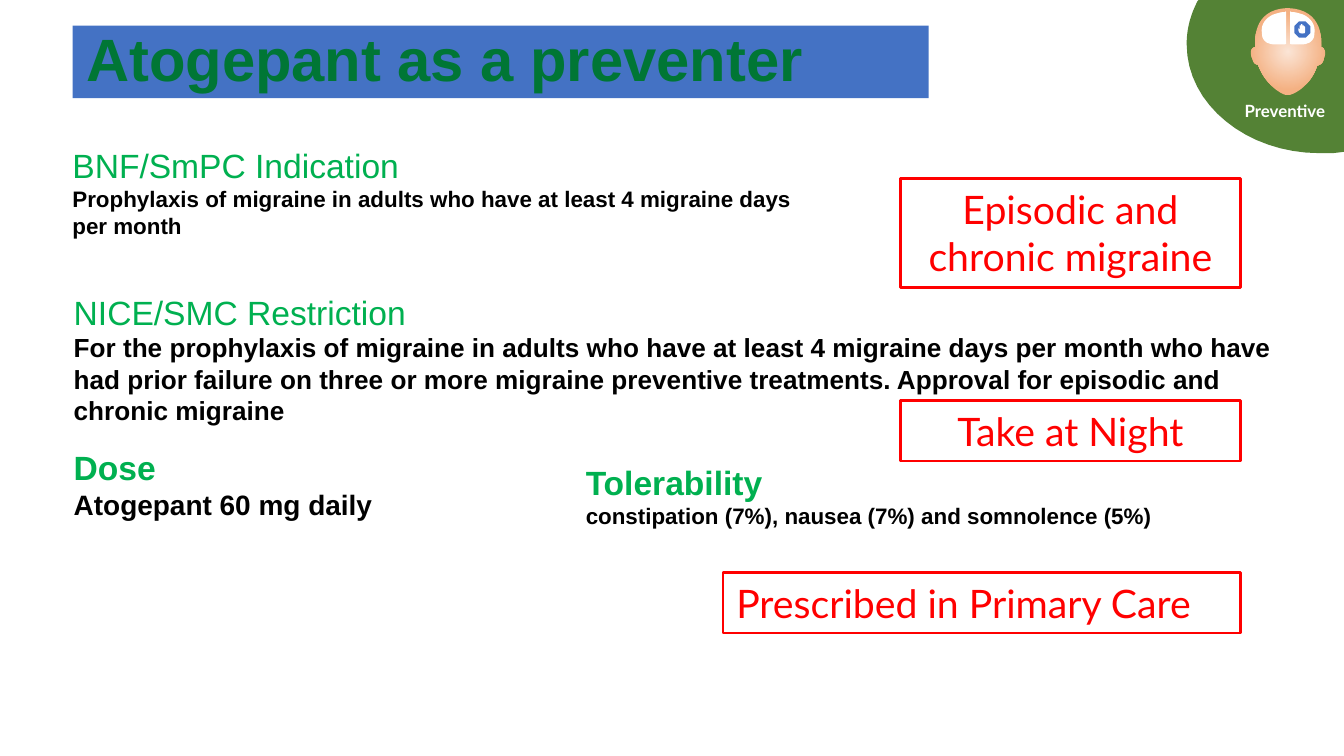
from typing import NamedTuple

from lxml import etree
from pptx import Presentation
from pptx.dml.color import RGBColor
from pptx.enum.shapes import MSO_SHAPE
from pptx.enum.text import MSO_ANCHOR, PP_ALIGN
from pptx.oxml.ns import qn
from pptx.util import Inches, Pt

RECT, OCTAGON = MSO_SHAPE.RECTANGLE, MSO_SHAPE.OCTAGON
LEFT, CENTER = PP_ALIGN.LEFT, PP_ALIGN.CENTER
MIDDLE, TOP = MSO_ANCHOR.MIDDLE, MSO_ANCHOR.TOP

BLACK = RGBColor(0, 0, 0)
WHITE = RGBColor(255, 255, 255)
RED = RGBColor(255, 0, 0)
BLUE = RGBColor(0x44, 0x72, 0xC4)
GREEN = RGBColor(0x00, 0xB0, 0x50)
DEEP = RGBColor(0x00, 0x76, 0x35)
OLIVE = RGBColor(0x54, 0x82, 0x35)
PALE = RGBColor(0xFB, 0xE5, 0xD6)
SKIN = RGBColor(0xF4, 0xB1, 0x83)

Box = tuple[float, float, float, float]
Point = tuple[float, float]


class Section(NamedTuple):
    box: Box
    head: str
    body: str
    size: int
    bold: bool


class Callout(NamedTuple):
    box: Box
    text: str
    align: PP_ALIGN = CENTER


SECTIONS = [
    Section((0.44, 1.03, 5.85, 1.11), "BNF/SmPC Indication",
            "Prophylaxis of migraine in adults who have at least 4 migraine days per month",
            12, False),
    Section((0.45, 2.12, 9.18, 1.11), "NICE/SMC Restriction",
            "For the prophylaxis of migraine in adults who have at least 4 migraine days "
            "per month who have had prior failure on three or more migraine preventive "
            "treatments. Approval for episodic and chronic migraine", 14, False),
    Section((0.45, 3.28, 2.66, 0.66), "Dose", "Atogepant 60 mg daily", 15, True),
    Section((4.26, 3.39, 5.15, 0.61), "Tolerability",
            "constipation (7%), nausea (7%) and somnolence (5%)", 12, True),
]
CALLOUTS = [
    Callout((6.7, 1.33, 2.53, 0.81), "Episodic and chronic migraine"),
    Callout((6.7, 2.98, 2.53, 0.45), "Take at Night"),
    Callout((5.38, 4.26, 3.85, 0.45), "Prescribed in Primary Care", LEFT),
]

# Outlines: a start point, then lines (2 numbers) or cubic curves (6 numbers)
CORNER = [(8.92, 0), (10, 0), (10, 1.13), (9.92, 1.14),
          (9.89, 1.14, 9.85, 1.14, 9.82, 1.14),
          (9.28, 1.14, 8.83, 0.78, 8.83, 0.33),
          (8.83, 0.21, 8.86, 0.11, 8.91, 0.01)]
FACE = [(9.83, 0.35), (9.83, 0.32, 9.86, 0.07, 9.58, 0.06),
        (9.31, 0.07, 9.34, 0.32, 9.34, 0.35),
        (9.3, 0.36, 9.3, 0.4, 9.32, 0.44),
        (9.33, 0.48, 9.35, 0.48, 9.36, 0.48),
        (9.41, 0.62, 9.52, 0.7, 9.58, 0.71),
        (9.65, 0.7, 9.76, 0.62, 9.8, 0.49),
        (9.82, 0.48, 9.84, 0.48, 9.85, 0.44),
        (9.87, 0.39, 9.86, 0.36, 9.83, 0.35)]
BRAIN = [(9.57, 0.1), (9.57, 0.32), (9.57, 0.33, 9.57, 0.33, 9.56, 0.33),
         (9.47, 0.33), (9.45, 0.33, 9.44, 0.32, 9.43, 0.32),
         (9.4, 0.3, 9.39, 0.28, 9.39, 0.25),
         (9.38, 0.19, 9.41, 0.14, 9.47, 0.11),
         (9.5, 0.1, 9.53, 0.09, 9.56, 0.09),
         (9.57, 0.08, 9.57, 0.09, 9.57, 0.1)]
HAND = [(9.71, 0.24), (9.71, 0.25, 9.7, 0.25, 9.69, 0.25),
        (9.67, 0.25, 9.66, 0.24, 9.66, 0.21), (9.67, 0.22), (9.67, 0.19),
        (9.68, 0.19), (9.68, 0.18), (9.69, 0.18), (9.69, 0.19),
        (9.7, 0.19), (9.71, 0.2)]
AXIS = 9.585


def trace(outline: list[tuple], steps: int = 16) -> list[Point]:
    """Turn an outline into points, sampling its curves."""
    points = [outline[0]]
    for part in outline[1:]:
        if len(part) == 2:
            points.append(part)
            continue
        ends = (points[-1], part[:2], part[2:4], part[4:])
        for i in range(1, steps + 1):
            t = i / steps
            u = 1 - t
            mix = (u**3, 3 * u * u * t, 3 * u * t * t, t**3)
            points.append(tuple(sum(m * e[k] for m, e in zip(mix, ends)) for k in (0, 1)))
    return points


def paint(shape, color: RGBColor) -> None:
    shape.shadow.inherit = False
    shape.fill.solid()
    shape.fill.fore_color.rgb = color
    shape.line.fill.background()


def draw_form(shapes, points: list[Point], color: RGBColor):
    dots = [(Inches(x), Inches(y)) for x, y in points]
    pen = shapes.build_freeform(*dots[0], scale=1.0)
    pen.add_line_segments(dots[1:], close=True)
    form = pen.convert_to_shape()
    paint(form, color)
    return form


def shade(form) -> None:
    """Fill with a radial skin gradient."""
    form.fill.gradient()
    for stop, color, place in zip(form.fill.gradient_stops, (PALE, SKIN), (0, 0.67)):
        stop.color.rgb = color
        stop.position = place
    grad = form.element.spPr.find(qn("a:gradFill"))
    grad.remove(grad.find(qn("a:lin")))
    ring = etree.SubElement(grad, qn("a:path"), path="circle")
    etree.SubElement(ring, qn("a:fillToRect"), l="50000", t="50000", r="50000", b="50000")


def set_font(para, name: str, size: int, color: RGBColor, bold: bool = False) -> None:
    font = para.font
    font.name, font.size, font.bold = name, Pt(size), bold
    font.color.rgb = color


def add_section(shapes, item: Section) -> None:
    frame = shapes.add_textbox(*map(Inches, item.box)).text_frame
    frame.word_wrap = True
    frame.text = f"{item.head}\n{item.body}"
    head, body = frame.paragraphs
    set_font(head, "Arial", 18, GREEN, item.bold)
    set_font(body, "Arial", item.size, BLACK, True)


def add_callout(shapes, item: Callout) -> None:
    shape = shapes.add_shape(RECT, *map(Inches, item.box))
    shape.shadow.inherit = False
    shape.fill.background()
    shape.line.color.rgb = RED
    shape.line.width = Pt(1.5)
    frame = shape.text_frame
    frame.word_wrap = True
    frame.vertical_anchor = TOP
    frame.text = item.text
    para = frame.paragraphs[0]
    para.alignment = item.align
    set_font(para, "Lato", 21, RED)


def add_title(slide) -> None:
    title = slide.shapes.title
    title.left, title.top, title.width, title.height = map(Inches, (0.54, 0.19, 6.37, 0.54))
    paint(title, BLUE)
    frame = title.text_frame
    frame.vertical_anchor = MIDDLE
    frame.text = "Atogepant as a preventer"
    para = frame.paragraphs[0]
    para.alignment = LEFT
    para.line_spacing = 0.9
    set_font(para, "Arial", 32, DEEP, True)


def add_badge(shapes) -> None:
    draw_form(shapes, trace(CORNER), OLIVE)
    shade(draw_form(shapes, trace(FACE), SKIN))
    half = trace(BRAIN)
    draw_form(shapes, half, WHITE)
    draw_form(shapes, [(2 * AXIS - x, y) for x, y in half], WHITE)
    sign = shapes.add_shape(OCTAGON, *map(Inches, (9.63, 0.16, 0.12, 0.12)))
    paint(sign, BLUE)
    draw_form(shapes, trace(HAND), WHITE)
    frame = shapes.add_textbox(*map(Inches, (9.16, 0.62, 0.8, 0.41))).text_frame
    frame.margin_left = frame.margin_right = 0
    frame.word_wrap = True
    frame.vertical_anchor = MIDDLE
    frame.text = "Preventive"
    para = frame.paragraphs[0]
    para.alignment = CENTER
    set_font(para, "Lato", 9, WHITE, True)


def main() -> None:
    deck = Presentation()
    deck.slide_width = Inches(10)
    deck.slide_height = deck.slide_width * 9 // 16
    slide = deck.slides.add_slide(deck.slide_layouts[5])
    add_title(slide)
    for item in SECTIONS:
        add_section(slide.shapes, item)
    add_badge(slide.shapes)
    for item in CALLOUTS:
        add_callout(slide.shapes, item)
    deck.save("out.pptx")


if __name__ == "__main__":
    main()
